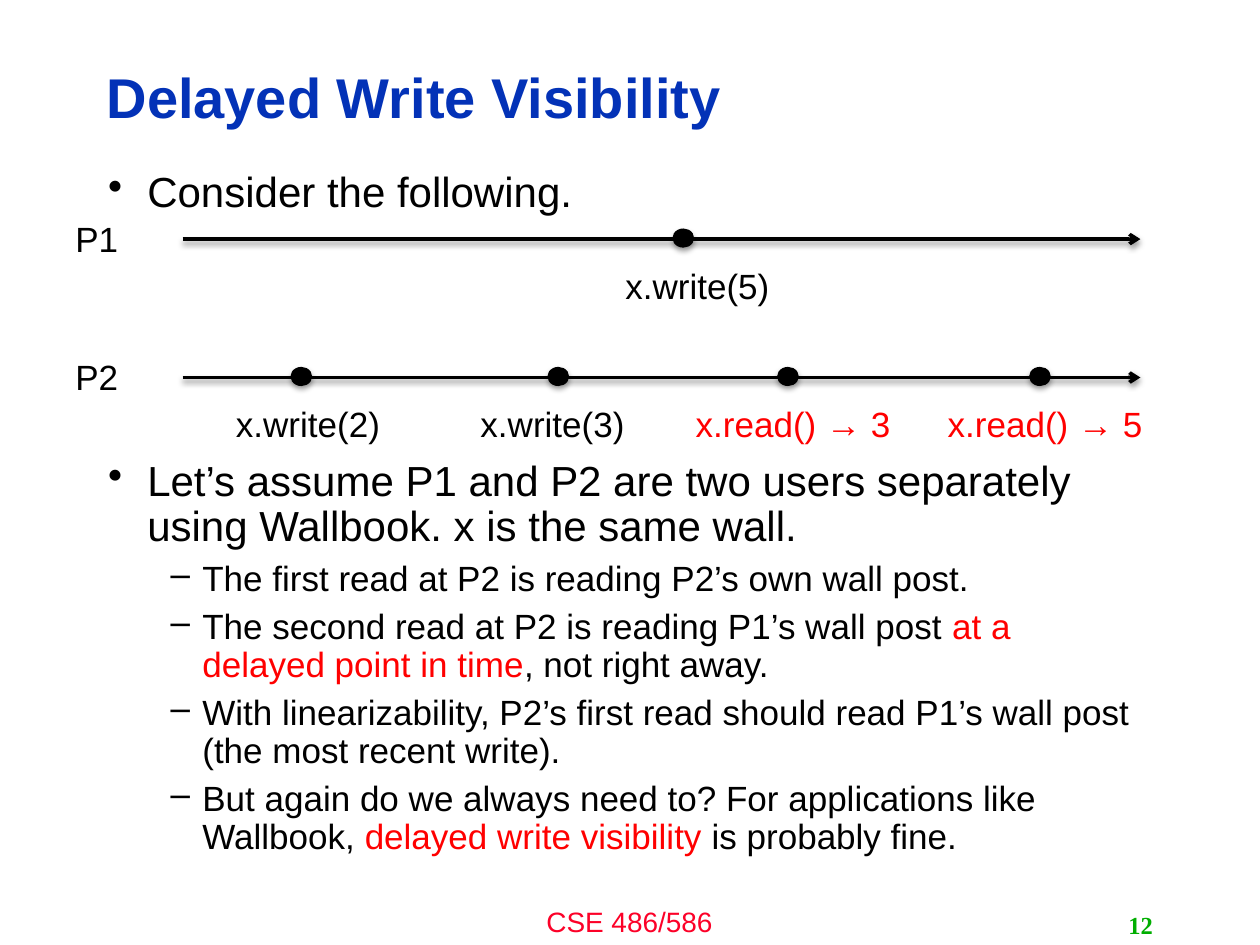
"""Build the slide on delayed write visibility."""
from lxml import etree
from pptx import Presentation
from pptx import util as u
from pptx.dml.color import RGBColor
from pptx.enum import shapes, text
from pptx.oxml.ns import qn

HUES = {"title": "0332B7", "ink": "000000", "red": "FF0000",
        "foot": "FC0128", "page": "00AE00"}
LEFT, MID, RIGHT = text.PP_ALIGN.LEFT, text.PP_ALIGN.CENTER, text.PP_ALIGN.RIGHT
LINES = [
    ("P1", 4.82, [(13.77, 14.06, "x.write(5)", "ink")]),
    ("P2", 7.61, [(6.07, 6.21, "x.write(2)", "ink"),
                  (11.25, 11.14, "x.write(3)", "ink"),
                  (15.88, 15.99, "x.read() → 3", "red"),
                  (20.96, 21.07, "x.read() → 5", "red")]),
]
POINTS = [
    (0, 7, [("Consider the following.", "ink")]),
    (0, 139, [("Let’s assume P1 and P2 are two users separately using "
               "Wallbook. x is the same wall.", "ink")]),
    (1, 6, [("The first read at P2 is reading P2’s own wall post.", "ink")]),
    (1, 6, [("The second read at P2 is reading P1’s wall post ", "ink"),
            ("at a delayed point in time", "red"),
            (", not right away.", "ink")]),
    (1, 6, [("With linearizability, P2’s first read should read P1’s wall "
             "post (the most recent write).", "ink")]),
    (1, 6, [("But again do we always need to? For applications like "
             "Wallbook, ", "ink"),
            ("delayed write visibility", "red"),
            (" is probably fine.", "ink")]),
]


def tint(hue):
    """Return the named colour."""
    return RGBColor.from_string(HUES[hue])


def add_node(root, tag, **attrs):
    """Append an XML element with its attributes."""
    node = etree.SubElement(root, qn(tag))
    for key, val in attrs.items():
        node.set(key, str(val))
    return node


def add_shade(props, alpha, dist):
    """Give shape properties a soft shadow that falls straight down."""
    shade = add_node(add_node(props, "a:effectLst"), "a:outerShdw",
                     blurRad=u.Pt(3.1), dist=u.Pt(dist), dir=5400000,
                     rotWithShape=0)
    color = add_node(shade, "a:srgbClr", val=HUES["ink"])
    add_node(color, "a:alpha", val=alpha * 1000)


def add_box(slide, left, top, width, height):
    """Add an empty wrapping text box."""
    box = slide.shapes.add_textbox(u.Cm(left), u.Cm(top), u.Cm(width), u.Cm(height))
    box.text_frame.word_wrap = True
    return box


def add_label(slide, words, area, size, hue, align=LEFT, bold=False,
              face="Arial", middle=False):
    """Add a text box with one line of text."""
    box = add_box(slide, *area)
    if middle:
        box.text_frame.vertical_anchor = text.MSO_ANCHOR.MIDDLE
    para = box.text_frame.paragraphs[0]
    para.text, para.alignment = words, align
    font = para.font
    font.name, font.size, font.bold = face, u.Pt(size), bold
    font.color.rgb = tint(hue)
    return box


def add_point(para, level, gap, runs):
    """Fill a bulleted paragraph with coloured runs."""
    para.level, para.line_spacing, para.space_before = level, 0.9, u.Pt(gap)
    para.font.name, para.font.size = "Arial", u.Pt((24, 20)[level])
    para.font.color.rgb = tint("ink")
    props = para._p.get_or_add_pPr()
    props.set("marL", str(u.Cm((0.79, 1.9)[level])))
    props.set("indent", str(-u.Cm((0.79, 0.64)[level])))
    mark = etree.Element(qn("a:buChar"), char="•–"[level])
    props.insert(list(props).index(props.find(qn("a:defRPr"))), mark)
    for words, hue in runs:
        run = para.add_run()
        run.text = words
        run.font.name, run.font.size = "Arial", para.font.size
        run.font.color.rgb = tint(hue)


def add_list(slide):
    """Add the bulleted list, with room for the timelines."""
    frame = add_box(slide, 1.93, 3.33, 21.34, 14.94).text_frame
    for num, point in enumerate(POINTS):
        add_point(frame.add_paragraph() if num else frame.paragraphs[0], *point)


def add_dot(slide, mid, y):
    """Add an event dot centred at a place on a timeline."""
    dot = slide.shapes.add_shape(shapes.MSO_SHAPE.OVAL, u.Cm(mid - 0.2),
                                 u.Cm(y - 0.2), u.Cm(0.41), u.Cm(0.36))
    dot.fill.solid()
    dot.fill.fore_color.rgb = dot.line.color.rgb = tint("ink")
    dot.line.width = u.Pt(0.75)
    add_shade(dot._element.spPr, 35, 1.8)


def add_time(slide, name, y, events):
    """Add a process timeline with its dots and captions."""
    label = add_label(slide, name, (1.27, y - 0.56, 2.41, 1.12), 20, "ink")
    line = slide.shapes.add_connector(shapes.MSO_CONNECTOR.STRAIGHT,
                                      u.Cm(3.68), u.Cm(y), u.Cm(22.99), u.Cm(y))
    line.begin_connect(label, 3)
    line.line.color.rgb, line.line.width = tint("ink"), u.Pt(2)
    add_node(line.line._get_or_add_ln(), "a:tailEnd", type="arrow")
    add_shade(line._element.spPr, 38, 1.6)
    for spot, mid, words, hue in events:
        add_dot(slide, spot, y)
        add_label(slide, words, (mid - 4.36, y + 0.38, 8.72, 1.12), 20, hue, MID)


def main():
    """Build and save the slide."""
    deck = Presentation()
    deck.slide_width, deck.slide_height = u.Cm(25.4), u.Cm(19.05)
    slide = deck.slides.add_slide(deck.slide_layouts[6])
    add_label(slide, "CSE 486/586", (8.46, 18.11, 8.46, 0.94), 16, "foot", MID)
    add_label(slide, "Delayed Write Visibility", (1.9, 0.91, 20.27, 2.06),
              32, "title", bold=True, middle=True)
    add_list(slide)
    add_label(slide, "12", (18.21, 18.24, 5.28, 0.81), 14, "page", RIGHT,
              True, "Times New Roman", True)
    for name, y, events in LINES:
        add_time(slide, name, y, events)
    deck.save("out.pptx")


if __name__ == "__main__":
    main()
